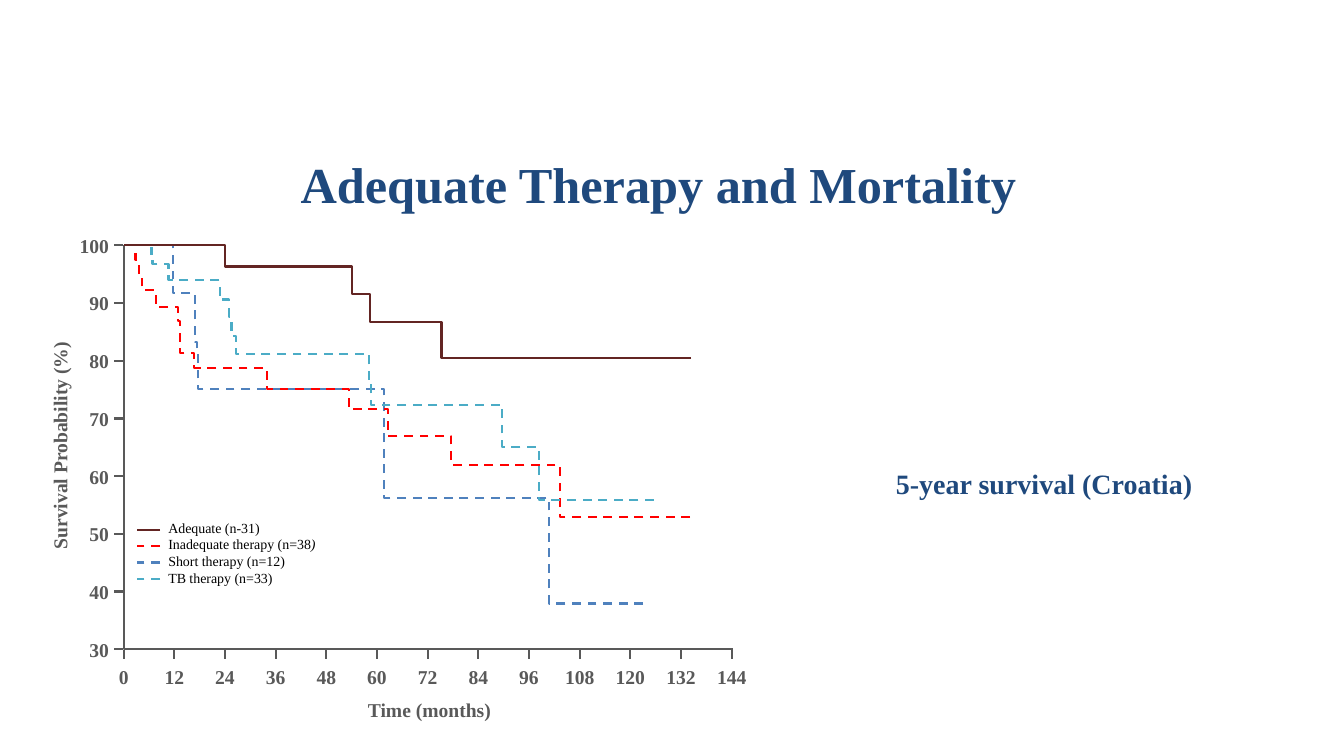
from lxml import etree
from pptx import Presentation
from pptx.dml.color import RGBColor
from pptx.enum.dml import MSO_LINE
from pptx.enum.shapes import MSO_CONNECTOR
from pptx.enum.text import MSO_ANCHOR, PP_ALIGN
from pptx.oxml.ns import qn
from pptx.util import Inches, Pt

NAVY = RGBColor(0x1F, 0x49, 0x7D)
GRAY = RGBColor(0x59, 0x59, 0x59)
BLACK = RGBColor(0x00, 0x00, 0x00)
MAROON = RGBColor(0x63, 0x25, 0x23)
RED = RGBColor(0xFF, 0x00, 0x00)
BLUE = RGBColor(0x4F, 0x81, 0xBD)
TEAL = RGBColor(0x4B, 0xAC, 0xC6)

AXIS_LEFT, AXIS_TOP, AXIS_BOTTOM = 1.16, 2.3, 6.09
MONTH_WIDTH = 5.7 / 144
PERCENT_HEIGHT = (AXIS_BOTTOM - AXIS_TOP) / 70

deck = Presentation()
deck.slide_width = Inches(12.6)
deck.slide_height = Inches(7.09)
page = deck.slides.add_slide(deck.slide_layouts[6])


def add_span(para, text, size, color, bold=True):
    span = para.add_run()
    span.text = text
    span.font.name = "Times New Roman"
    span.font.size = Pt(size)
    span.font.bold = bold
    span.font.color.rgb = color
    return span


def add_label(text, left, top, width, height, size=13.2, color=GRAY,
              align=PP_ALIGN.CENTER, anchor=MSO_ANCHOR.TOP):
    box = page.shapes.add_textbox(Inches(left), Inches(top), Inches(width), Inches(height))
    box.text_frame.word_wrap = True
    box.text_frame.vertical_anchor = anchor
    para = box.text_frame.paragraphs[0]
    para.alignment = align
    add_span(para, text, size, color)
    return box


add_label("Adequate Therapy and Mortality", 1.76, 1.7, 8.83, 0.35, 34, NAVY,
          anchor=MSO_ANCHOR.BOTTOM)
add_label("5-year survival (Croatia)", 6.98, 4.33, 5.62, 0.42, 18.9, NAVY)
add_label("Time (months)", 1.18, 6.5, 5.69, 0.32)
survival_title = add_label("Survival Probability (%)", -1.34, 4.02, 3.8, 0.32)
survival_title.rotation = 270

rules = []
for percent in range(30, 101, 10):
    y = AXIS_TOP + (100 - percent) * PERCENT_HEIGHT
    rules.append((AXIS_LEFT - 0.01, y, AXIS_LEFT - 0.09, y, GRAY, False))
    add_label(str(percent), 0.26, y - 0.16, 0.86, 0.32,
              align=PP_ALIGN.RIGHT, anchor=MSO_ANCHOR.MIDDLE)
for month in range(0, 145, 12):
    x = AXIS_LEFT + month * MONTH_WIDTH
    rules.append((x, AXIS_BOTTOM + 0.01, x, AXIS_BOTTOM + 0.09, GRAY, False))
    add_label(str(month), x - 0.35, 6.19, 0.7, 0.32)

# Each list alternates x, y, x, y: every new value turns the line by one corner.
steps = [
    (GRAY, False, [6.87, AXIS_BOTTOM, AXIS_LEFT, AXIS_TOP]),
    (BLUE, True, [6.03, 5.66, 5.15, 4.67, 3.6, 3.65, 1.86, 3.27, 1.85, 3.21,
                  1.83, 2.75, 1.62, 2.31]),
    (RED, True, [6.47, 4.85, 5.25, 4.36, 4.23, 4.09, 3.64, 3.84, 3.27, 3.65,
                 2.5, 3.45, 1.82, 3.31, 1.69, 3.01, 1.67, 2.88, 1.46, 2.72,
                 1.33, 2.6, 1.3, 2.44, 1.27, 2.31]),
    (TEAL, True, [6.13, 4.69, 5.05, 4.19, 4.71, 3.8, 3.48, 3.58, 3.46, 3.32,
                  2.21, 3.15, 2.17, 2.97, 2.15, 2.81, 2.06, 2.63, 1.58, 2.48,
                  1.43, 2.41, 1.42, 2.32]),
    (MAROON, False, [6.48, 3.36, 4.14, 3.02, 3.47, 2.76, 3.3, 2.5, 2.11,
                     AXIS_TOP, AXIS_LEFT]),
]
for color, dashed, turns in steps:
    corners = []
    for index, pair in enumerate(zip(turns, turns[1:])):
        x, y = pair if index % 2 == 0 else pair[::-1]
        corners.append((Inches(x), Inches(y)))
    builder = page.shapes.build_freeform(*corners[0])
    builder.add_line_segments(corners[1:], close=False)
    curve = builder.convert_to_shape()
    curve.shadow.inherit = False
    curve.fill.background()
    curve.line.color.rgb = color
    curve.line.width = Pt(1.5)
    if dashed:
        curve.line.dash_style = MSO_LINE.DASH

legend = page.shapes.add_textbox(Inches(1.48), Inches(4.82), Inches(2.16), Inches(0.74))
legend.text_frame.word_wrap = True
entries = [
    (["Adequate (n-31)"], MAROON),
    (["Inadequate therapy (n=38", ")"], RED),
    (["Short therapy (n=12)"], BLUE),
    (["TB therapy (n=33)"], TEAL),
]
for index, (parts, color) in enumerate(entries):
    frame = legend.text_frame
    para = frame.paragraphs[0] if index == 0 else frame.add_paragraph()
    for part in parts:
        span = add_span(para, part, 9.4, BLACK, bold=False)
        span.font.italic = part == ")"
    y = 4.97 + index * 0.153
    rules.append((1.5, y, 1.28, y, color, color != MAROON))

for x1, y1, x2, y2, color, dashed in rules:
    rule = page.shapes.add_connector(MSO_CONNECTOR.STRAIGHT, Inches(x1), Inches(y1),
                                     Inches(x2), Inches(y2))
    etree.SubElement(rule._element.spPr, qn("a:effectLst"))
    rule.line.color.rgb = color
    rule.line.width = Pt(1.5)
    if dashed:
        rule.line.dash_style = MSO_LINE.DASH

deck.save("out.pptx")
